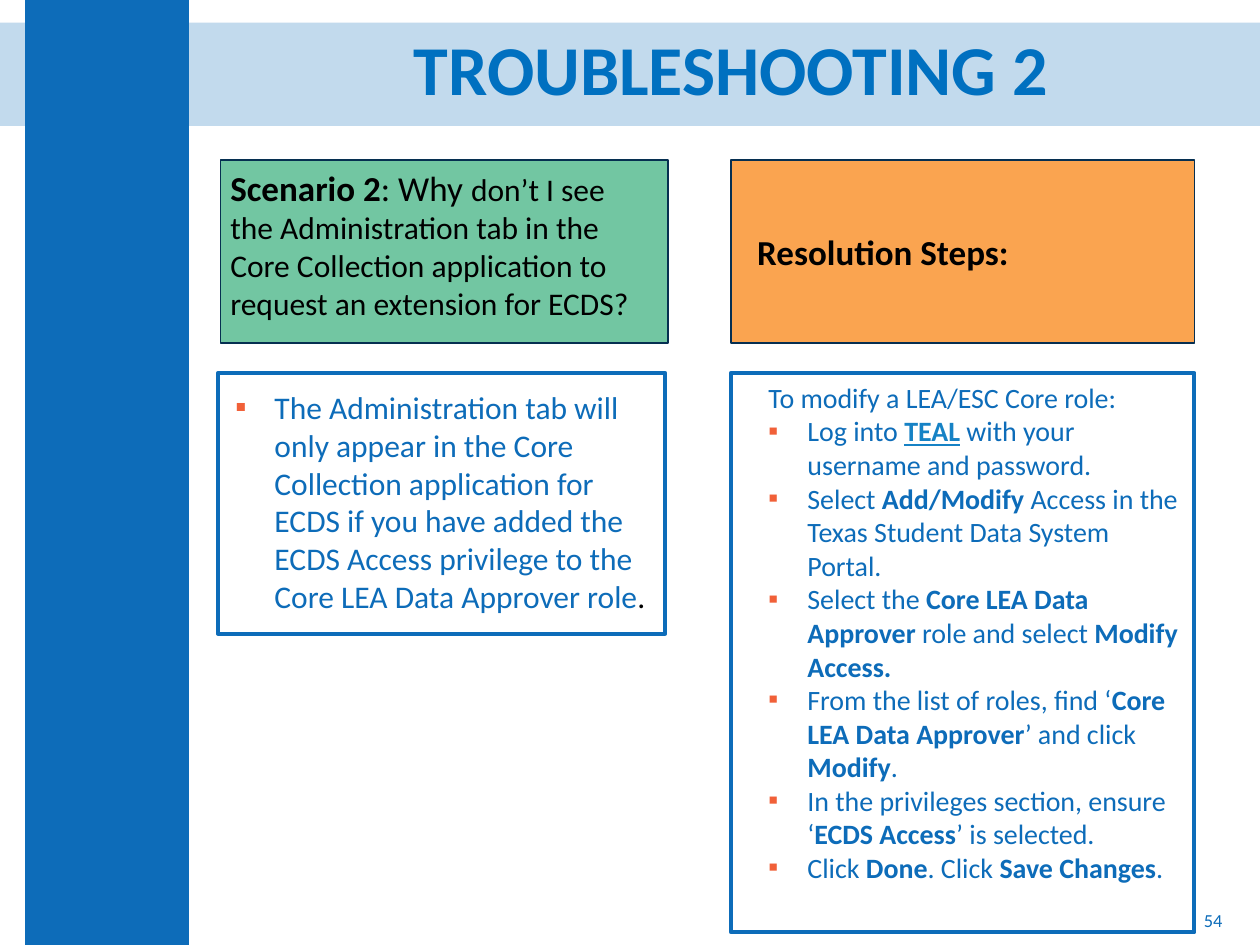
from lxml.etree import SubElement
from pptx import Presentation
from pptx.dml.color import RGBColor
from pptx.enum.shapes import MSO_SHAPE as Shape
from pptx.enum.text import MSO_ANCHOR as Anchor, PP_ALIGN as Align
from pptx.oxml.ns import qn
from pptx.util import Pt

EMU_PER_PX = 9144  # 100 px to the inch
COLORS = {
    "blue": "0D6CB9", "title": "0070C0", "green": "72C6A2", "orange": "FAA450",
    "navy": "062F51", "black": "000000", "bullet": "F16038", "link": "1682C5",
}
BOLD = {"bold": True}
LINK = {"bold": True, "underline": True, "color": "link"}

SCENARIO = [("Scenario 2", {"bold": True, "size": 20}), (": Why ", {"size": 20}),
            ("don’t I see the Administration tab in the Core Collection "
             "application to request an extension for ECDS?", {})]
CAUSE = [("The Administration tab will only appear in the Core Collection application "
          "for ECDS if you have added the ECDS Access privilege to the Core LEA Data "
          "Approver role", {}), (".", {"color": "black"})]
STEPS = [
    [("Log into ", {}), ("TEAL", LINK), (" with your username and password.", {})],
    [("Select ", {}), ("Add/Modify ", BOLD),
     ("Access in the Texas Student Data System Portal.", {})],
    [("Select the ", {}), ("Core LEA Data Approver", BOLD), (" role and select ", {}),
     ("Modify Access.", BOLD)],
    [("From the list of roles, find ‘", {}), ("Core LEA Data Approver", BOLD),
     ("’ and click ", {}), ("Modify", BOLD), (".", {})],
    [("In the privileges section, ensure ‘", {}), ("ECDS Access", BOLD),
     ("’ is selected.", {})],
    [("Click ", {}), ("Done", BOLD), (". Click ", {}), ("Save Changes", BOLD), (".", {})],
]


def px(value):
    return value * EMU_PER_PX


def rgb(name):
    return RGBColor.from_string(COLORS[name])


class SlideBuilder:
    font = "Calibri"
    indent = 31

    def __init__(self, slide):
        self.slide = slide

    def rectangle(self, box, fill=None, line=None, line_width=1, opacity=None):
        shape = self.slide.shapes.add_shape(Shape.RECTANGLE, *map(px, box))
        shape.shadow.inherit = False
        if fill:
            shape.fill.solid()
            shape.fill.fore_color.rgb = rgb(fill)
        else:
            shape.fill.background()
        if line:
            shape.line.color.rgb = rgb(line)
            shape.line.width = Pt(line_width)
        else:
            shape.line.fill.background()
        if opacity is not None:
            color = shape.element.spPr.find(qn("a:solidFill"))[0]
            SubElement(color, qn("a:alpha"), val=str(opacity * 1000))
        return shape

    def text_box(self, box, anchor=Anchor.TOP):
        frame = self.slide.shapes.add_textbox(*map(px, box)).text_frame
        frame.word_wrap = True
        frame.vertical_anchor = anchor
        return frame

    def bullet(self, paragraph):
        properties = paragraph._p.get_or_add_pPr()
        properties.set("marL", str(px(self.indent)))
        properties.set("indent", str(-px(self.indent)))
        color = SubElement(properties, qn("a:buClr"))
        SubElement(color, qn("a:srgbClr"), val=COLORS["bullet"])
        SubElement(properties, qn("a:buFont"), typeface=self.font)
        SubElement(properties, qn("a:buChar"), char="▪")

    def add_text(self, frame, runs, size, color="blue", align=Align.LEFT, bullet=False):
        """Fill the frame's empty first paragraph, or append a new one."""
        paragraph = frame.paragraphs[0]
        if paragraph.runs:
            paragraph = frame.add_paragraph()
        paragraph.alignment = align
        if bullet:
            self.bullet(paragraph)
        for text, style in runs:
            run = paragraph.add_run()
            run.text = text
            run.font.name = self.font
            run.font.size = Pt(style.get("size", size))
            run.font.bold = style.get("bold", False)
            run.font.underline = style.get("underline", False)
            run.font.color.rgb = rgb(style.get("color", color))
        return paragraph


def main():
    presentation = Presentation()
    presentation.slide_width, presentation.slide_height = px(1000), px(750)
    builder = SlideBuilder(presentation.slides.add_slide(presentation.slide_layouts[6]))

    builder.rectangle((0, 18, 1000, 82), fill="blue", opacity=25)
    builder.rectangle((20, 0, 130, 750), fill="blue")
    title = builder.text_box((190, 17, 780, 82), Anchor.MIDDLE)
    builder.add_text(title, [("TROUBLESHOOTING 2", BOLD)], 40, "title",
                     Align.CENTER).line_spacing = 0.9

    builder.rectangle((175, 127, 355, 145), fill="green", line="navy")
    scenario = builder.text_box((173, 127, 350, 135))
    builder.add_text(scenario, SCENARIO, 18, "black")

    builder.rectangle((173, 296, 355, 207), line="blue", line_width=2.25)
    cause = builder.text_box((177, 303, 348, 222))
    builder.add_text(cause, CAUSE, 18, bullet=True)

    heading = builder.rectangle((580, 127, 368, 145), fill="orange", line="navy").text_frame
    heading.vertical_anchor = Anchor.MIDDLE
    heading.margin_left = px(21)
    builder.add_text(heading, [("Resolution Steps:", BOLD)], 20, "black")

    builder.rectangle((580, 296, 368, 444), line="blue", line_width=2.25)
    steps = builder.text_box((600, 297, 348, 414))
    builder.add_text(steps, [("To modify a LEA/ESC Core role:", {})], 16)
    for step in STEPS:
        builder.add_text(steps, step, 16, bullet=True)

    page_number = builder.text_box((755, 710, 225, 40), Anchor.MIDDLE)
    builder.add_text(page_number, [("54", {})], 10.5, align=Align.RIGHT)

    presentation.save("out.pptx")


if __name__ == "__main__":
    main()
